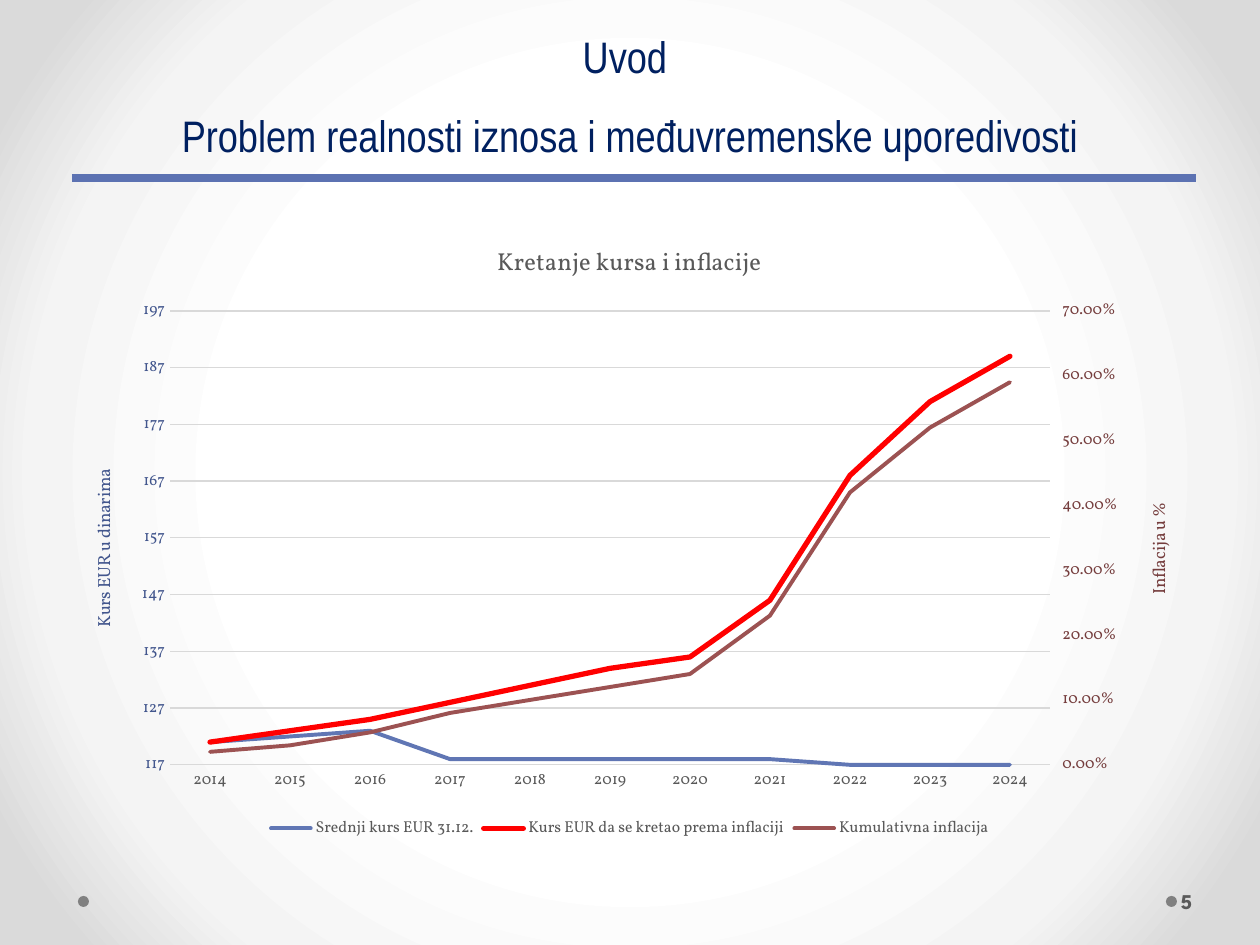
from copy import deepcopy
from dataclasses import dataclass

from pptx import Presentation
from pptx.chart.axis import CategoryAxis, ValueAxis
from pptx.chart.data import CategoryChartData
from pptx.dml.color import RGBColor as Rgb
from pptx.enum.chart import XL_CHART_TYPE as ChartType
from pptx.enum.chart import XL_LEGEND_POSITION as LegendPosition
from pptx.enum.chart import XL_TICK_MARK as TickMark
from pptx.enum.shapes import MSO_CONNECTOR as Connector
from pptx.enum.shapes import MSO_SHAPE as Shape
from pptx.enum.text import MSO_ANCHOR as Anchor
from pptx.enum.text import PP_ALIGN as Align
from pptx.oxml import parse_xml
from pptx.oxml.ns import nsdecls, qn
from pptx.util import Pt

SCALE = 914400 / 126


@dataclass(frozen=True)
class Theme:
    """Colours, fonts and type sizes of the slide."""
    navy: str = "002060"
    rule: str = "5C72B2"
    dot: str = "808080"
    text: str = "595959"
    grid: str = "D9D9D9"
    rate_axis: str = "42568D"
    inflation_axis: str = "753D3D"
    title_font: str = "Arial Narrow"
    number_font: str = "League Spartan"
    chart_font: str = "Vollkorn"
    title_size: float = 25.2
    number_size: int = 12
    chart_title_size: int = 14
    axis_title_size: int = 10
    label_size: int = 9
    backdrop: tuple = ((50, "FFFFFF"), (76, "F4F4F4"), (92, "DADADA"))


THEME = Theme()
YEARS = [str(year) for year in range(2014, 2025)]
SERIES = [
    ("Srednji kurs EUR 31.12.", "6076B4", 2.25,
     (121, 122, 123, 118, 118, 118, 118, 118, 117, 117, 117)),
    ("Kurs EUR da se kretao prema inflaciji", "FF0000", 3,
     (121, 123, 125, 128, 131, 134, 136, 146, 168, 181, 189)),
    ("Kumulativna inflacija", "9C5252", 2.25,
     (0.02, 0.03, 0.05, 0.08, 0.1, 0.12, 0.14, 0.23, 0.42, 0.52, 0.59)),
]


def px(*lengths):
    """Turn pixel lengths into EMU."""
    return [round(length * SCALE) for length in lengths]


def apply(target, values):
    """Set each attribute of the target from a dict."""
    for name, value in values.items():
        setattr(target, name, value)


def style_font(font, face, size, color, bold=False):
    """Give a font its face, size, colour and weight."""
    apply(font, {"name": face, "size": Pt(size), "bold": bold})
    font.color.rgb = Rgb.from_string(color)


def style_line(line, color, width):
    """Give a line its colour and width."""
    line.color.rgb = Rgb.from_string(color)
    line.width = Pt(width)


def paint_background(slide):
    """Fill the slide with a radial gradient."""
    stops = "".join(f'<a:gs pos="{position * 1000}"><a:srgbClr val="{color}"/></a:gs>'
                    for position, color in THEME.backdrop)
    slide.element.cSld.insert(0, parse_xml(
        f'<p:bg {nsdecls("p", "a")}><p:bgPr><a:gradFill rotWithShape="1"><a:gsLst>{stops}'
        '</a:gsLst><a:path path="circle"><a:fillToRect l="50000" t="50000" r="50000" '
        'b="50000"/></a:path></a:gradFill><a:effectLst/></p:bgPr></p:bg>'))


def add_text(slide, box, lines, font_values, frame_values, paragraph_values):
    """Place a text box with one paragraph of broken lines."""
    frame = slide.shapes.add_textbox(*px(*box)).text_frame
    apply(frame, {"word_wrap": True, **frame_values})
    paragraph = frame.paragraphs[0]
    paragraph.text = "\v".join(lines)
    apply(paragraph, paragraph_values)
    for run in paragraph.runs:
        style_font(run.font, *font_values)


def add_header(slide, left, top, width, height):
    """Place the title and the rule below it."""
    add_text(slide, (left, top, width, height),
             ("Uvod ", "Problem realnosti iznosa i međuvremenske uporedivosti"),
             (THEME.title_font, THEME.title_size, THEME.navy),
             {"vertical_anchor": Anchor.BOTTOM},
             {"alignment": Align.CENTER, "line_spacing": 1.5})
    rule_top = top + height + 10
    rule = slide.shapes.add_connector(
        Connector.STRAIGHT, *px(left + 9, rule_top, left + width - 1, rule_top))
    style_line(rule.line, THEME.rule, 4.5)
    rule._element.spPr.append(parse_xml(f'<a:effectLst {nsdecls("a")}/>'))


def add_footer(slide, left, top, width, height):
    """Place the two dots and the slide number."""
    dot_size = 11
    number_left = left + width - 77
    for dot_left in (left, number_left - dot_size):
        dot = slide.shapes.add_shape(Shape.OVAL, *px(dot_left, top + 20, dot_size, dot_size))
        dot.shadow.inherit = False
        dot.fill.solid()
        dot.fill.fore_color.rgb = Rgb.from_string(THEME.dot)
        dot.line.fill.background()
    add_text(slide, (number_left, top, 77, height), ("5",),
             (THEME.number_font, THEME.number_size, THEME.text, True),
             {"vertical_anchor": Anchor.MIDDLE, "margin_left": px(4)[0]}, {})


def split_right_axis(chart):
    """Move the last series to its own axes and return the new value axis."""
    plot_area = chart._chartSpace.chart.plotArea
    left_plot = plot_area.find(qn("c:lineChart"))
    right_plot = deepcopy(left_plot)
    left_plot.remove(left_plot.findall(qn("c:ser"))[-1])
    for series in right_plot.findall(qn("c:ser"))[:-1]:
        right_plot.remove(series)
    left_plot.addnext(right_plot)
    category, value = (deepcopy(axis._element)
                       for axis in (chart.category_axis, chart.value_axis))
    for element, axis_id, cross_id in ((category, "5001", "5002"), (value, "5002", "5001")):
        element.find(qn("c:axId")).set("val", axis_id)
        element.find(qn("c:crossAx")).set("val", cross_id)
    for element, axis_id in zip(right_plot.findall(qn("c:axId")), ("5001", "5002")):
        element.set("val", axis_id)
    chart.value_axis._element.addnext(value)
    value.addnext(category)
    value.find(qn("c:axPos")).set("val", "r")
    value.find(qn("c:crosses")).set("val", "max")
    CategoryAxis(category).visible = False
    return ValueAxis(value)


def style_value_axis(axis, color, number_format, values):
    """Format the labels and scale of one value axis."""
    apply(axis, values)
    apply(axis.tick_labels, {"number_format": number_format, "number_format_is_linked": False})
    style_font(axis.tick_labels.font, THEME.chart_font, THEME.label_size, color)
    axis.format.line.fill.background()


def add_title(title, text, size, color):
    """Write a chart title or an axis title."""
    title.text_frame.text = text
    style_font(title.text_frame.paragraphs[0].runs[0].font, THEME.chart_font, size, color)


def make_layout(target, **fractions):
    """Return a manual layout with places as fractions of the chart."""
    sizes = "".join(f'<c:{name} val="{value:.4f}"/>' for name, value in fractions.items())
    return parse_xml(f'<c:layout {nsdecls("c")}><c:manualLayout>{target}'
                     f'<c:xMode val="edge"/><c:yMode val="edge"/>{sizes}'
                     '</c:manualLayout></c:layout>')


def set_layout(parent, index, layout):
    """Put a layout into its parent in place of any other."""
    for old_layout in parent.findall(qn("c:layout")):
        parent.remove(old_layout)
    parent.insert(index, layout)


def add_rate_chart(slide, left, top, width, height):
    """Place the chart of exchange rate and inflation."""
    data = CategoryChartData()
    data.categories = YEARS
    for name, _, _, values in SERIES:
        data.add_series(name, values)
    chart = slide.shapes.add_chart(ChartType.LINE, *px(left, top, width, height), data).chart
    style_font(chart.font, THEME.chart_font, 10, "000000")
    for series, (_, color, line_width, _) in zip(chart.plots[0].series, SERIES):
        series.smooth = False
        style_line(series.format.line, color, line_width)
        series.format.line._get_or_add_ln().set("cap", "rnd")
    chart.plots[0].vary_by_categories = False
    add_title(chart.chart_title, "Kretanje kursa i inflacije", THEME.chart_title_size, THEME.text)
    chart.has_legend = True
    apply(chart.legend, {"position": LegendPosition.BOTTOM, "include_in_layout": False})
    style_font(chart.legend.font, THEME.chart_font, THEME.label_size, THEME.text)
    years, left_axis = chart.category_axis, chart.value_axis
    right_axis = split_right_axis(chart)
    years.major_tick_mark = TickMark.NONE
    style_line(years.format.line, THEME.grid, 0.75)
    style_font(years.tick_labels.font, THEME.chart_font, THEME.label_size, THEME.text)
    style_value_axis(left_axis, THEME.rate_axis, "General",
                     {"minimum_scale": 117, "maximum_scale": 197, "major_unit": 10,
                      "major_tick_mark": TickMark.NONE})
    style_line(left_axis.major_gridlines.format.line, THEME.grid, 0.75)
    style_value_axis(right_axis, THEME.inflation_axis, "0.00%",
                     {"minimum_scale": 0, "maximum_scale": 0.7, "major_unit": 0.1,
                      "major_tick_mark": TickMark.OUTSIDE, "has_major_gridlines": False})
    for axis, text, color, title_left, title_top in (
            (left_axis, "Kurs EUR u dinarima", THEME.rate_axis, 26, 246),
            (right_axis, "Inflacija u %", THEME.inflation_axis, 1081, 279)):
        add_title(axis.axis_title, text, THEME.axis_title_size, color)
        set_layout(axis.axis_title._element, 1,
                   make_layout("", x=title_left / width, y=title_top / height))
    set_layout(chart._chartSpace.chart.plotArea, 0,
               make_layout('<c:layoutTarget val="inner"/>', x=107 / width, y=91 / height,
                           w=880 / width, h=454 / height))


def main():
    """Build the slide and save it."""
    presentation = Presentation()
    apply(presentation, dict(zip(("slide_width", "slide_height"), px(1260, 945))))
    slide = presentation.slides.add_slide(presentation.slide_layouts[6])
    paint_background(slide)
    add_footer(slide, 78, 876, 1176, 50)
    add_header(slide, 63, 0, 1134, 168)
    add_rate_chart(slide, 63, 220, 1134, 624)
    presentation.save("out.pptx")


if __name__ == "__main__":
    main()
